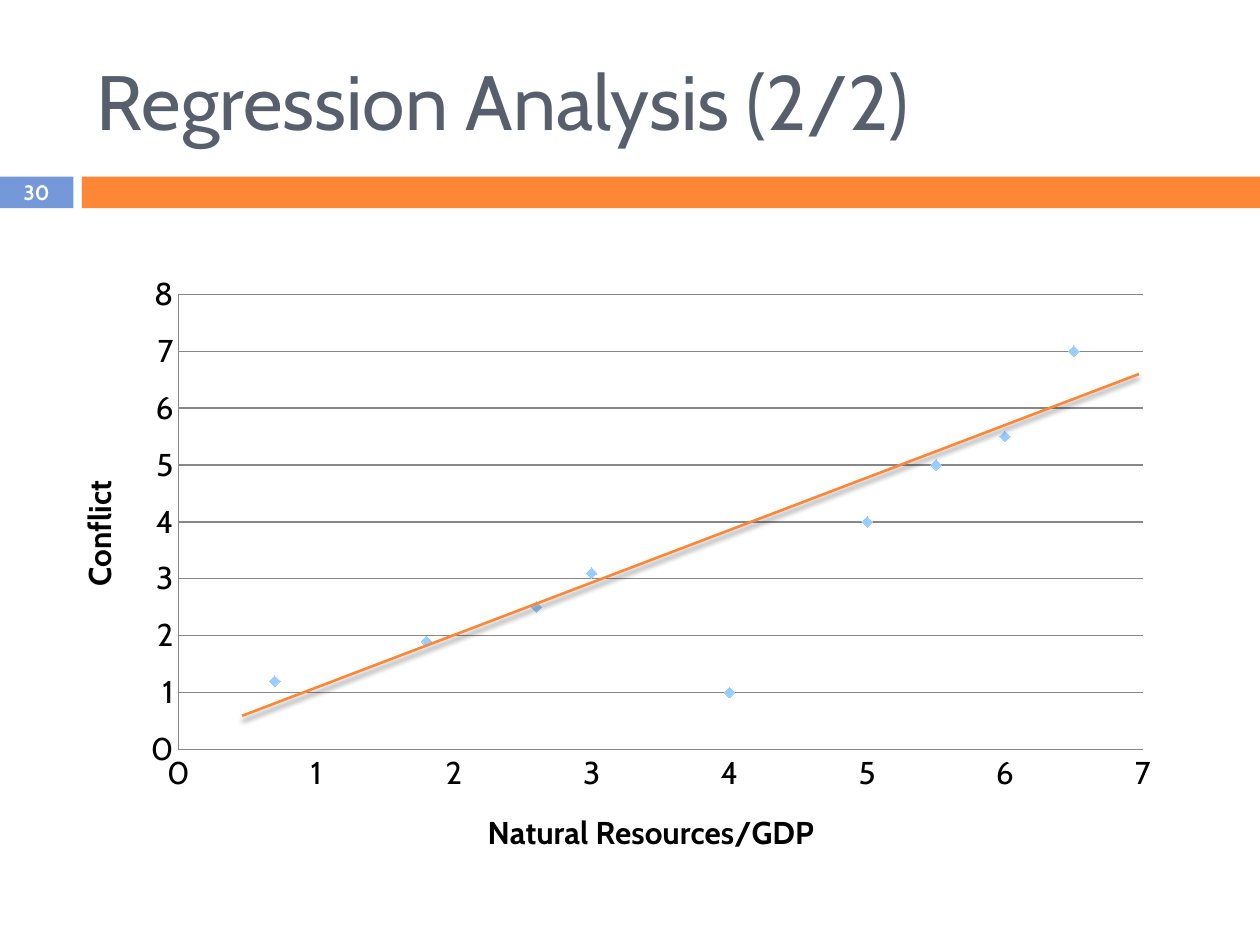
from lxml import etree
from pptx import Presentation
from pptx.chart.data import XyChartData
from pptx.dml.color import RGBColor
from pptx.enum.chart import XL_CHART_TYPE, XL_MARKER_STYLE, XL_TICK_MARK
from pptx.enum.shapes import MSO_CONNECTOR, MSO_SHAPE
from pptx.enum.text import MSO_ANCHOR, PP_ALIGN
from pptx.oxml import parse_xml
from pptx.oxml.ns import nsdecls, qn
from pptx.util import Cm, Pt

FONT = "Cabin"
BLUE = RGBColor(0x75, 0x98, 0xD9)
ORANGE = RGBColor(0xFE, 0x86, 0x37)
SLATE = RGBColor(0x57, 0x5F, 0x6D)
MARKER_BLUE = RGBColor(0x99, 0xCC, 0xFF)
GRAY = RGBColor(0x87, 0x87, 0x87)
BLACK = RGBColor(0, 0, 0)
WHITE = RGBColor(0xFF, 0xFF, 0xFF)


def style_font(font, size, color, bold=False):
    font.name = FONT
    font.size = Pt(size)
    font.bold = bold
    font.color.rgb = color


def add_text(frame, text, size, color, align, bold=False):
    frame.word_wrap = True
    frame.vertical_anchor = MSO_ANCHOR.MIDDLE
    para = frame.paragraphs[0]
    para.alignment = align
    span = para.add_run()
    span.text = text
    style_font(span.font, size, color, bold)


deck = Presentation()
deck.slide_width = Cm(25.4)
deck.slide_height = Cm(19.05)
page = deck.slides.add_slide(deck.slide_layouts[5])

for left, width, color in [(0, 1.48, BLUE), (1.65, 23.75, ORANGE)]:
    band = page.shapes.add_shape(MSO_SHAPE.RECTANGLE, Cm(left), Cm(3.56), Cm(width), Cm(0.64))
    band.shadow.inherit = False
    band.fill.solid()
    band.fill.fore_color.rgb = color
    band.line.fill.background()

title = page.shapes.title
title.left, title.top, title.width, title.height = Cm(1.7), Cm(0.64), Cm(22.66), Cm(2.74)
add_text(title.text_frame, "Regression Analysis (2/2)", 44, SLATE, PP_ALIGN.LEFT)

points = [(0.7, 1.2), (1.8, 1.9), (2.6, 2.5), (3, 3.1), (4, 1),
          (5, 4), (5.5, 5), (6, 5.5), (6.5, 7)]
chart_data = XyChartData()
observations = chart_data.add_series("Series 1")
for resources, conflict in points:
    observations.add_data_point(resources, conflict)
chart = page.shapes.add_chart(
    XL_CHART_TYPE.XY_SCATTER, Cm(0.99), Cm(5.31), Cm(22.66), Cm(12.5), chart_data
).chart
chart.has_legend = False
chart.has_title = False
style_font(chart.font, 18, BLACK)

series = chart.plots[0].series[0]
chart.plots[0].vary_by_categories = False
series.smooth = False
series.format.line.fill.background()
series.marker.style = XL_MARKER_STYLE.DIAMOND
series.marker.size = 6
series.marker.format.fill.solid()
series.marker.format.fill.fore_color.rgb = MARKER_BLUE
series.marker.format.line.fill.background()

for axis, name, maximum in [(chart.category_axis, "Natural Resources/GDP", 7),
                            (chart.value_axis, "Conflict", 8)]:
    axis.minimum_scale = 0
    axis.maximum_scale = maximum
    axis.major_unit = 1
    axis.major_tick_mark = XL_TICK_MARK.NONE
    axis.minor_tick_mark = XL_TICK_MARK.NONE
    axis.format.line.color.rgb = GRAY
    axis.tick_labels.number_format = "General"
    axis.tick_labels.number_format_is_linked = False
    span = axis.axis_title.text_frame.paragraphs[0].add_run()
    span.text = name
    style_font(span.font, 18, BLACK, True)
chart.category_axis.has_major_gridlines = False
chart.value_axis.has_major_gridlines = True
chart.value_axis.major_gridlines.format.line.color.rgb = GRAY

plot_area = chart.element.find(".//" + qn("c:plotArea"))
for layout in plot_area.findall(qn("c:layout")):
    plot_area.remove(layout)
layout = parse_xml(f"<c:layout {nsdecls('c')}/>")
plot_area.insert(0, layout)
manual = etree.SubElement(layout, qn("c:manualLayout"))
for tag, value in [("layoutTarget", "inner"), ("xMode", "edge"), ("yMode", "edge"),
                   ("x", "0.115"), ("y", "0.05"), ("w", "0.858"), ("h", "0.734")]:
    etree.SubElement(manual, qn(f"c:{tag}")).set("val", value)

trend = page.shapes.add_connector(
    MSO_CONNECTOR.STRAIGHT, Cm(4.88), Cm(14.43), Cm(22.96), Cm(7.54)
)
trend.line.color.rgb = ORANGE
trend.line.width = Pt(1.5)
trend.element.spPr.append(parse_xml(
    f'<a:effectLst {nsdecls("a")}>'
    f'<a:outerShdw blurRad="{Pt(3)}" dist="{Pt(2.4)}" dir="5400000" rotWithShape="0">'
    '<a:srgbClr val="000000"><a:alpha val="45000"/></a:srgbClr>'
    '</a:outerShdw></a:effectLst>'
))

number_box = page.shapes.add_textbox(0, Cm(3.53), Cm(1.48), Cm(0.69))
number_frame = number_box.text_frame
number_frame.margin_left = number_frame.margin_right = 0
number_frame.margin_top = number_frame.margin_bottom = 0
add_text(number_frame, "30", 11.9, WHITE, PP_ALIGN.CENTER, True)

deck.save("out.pptx")
